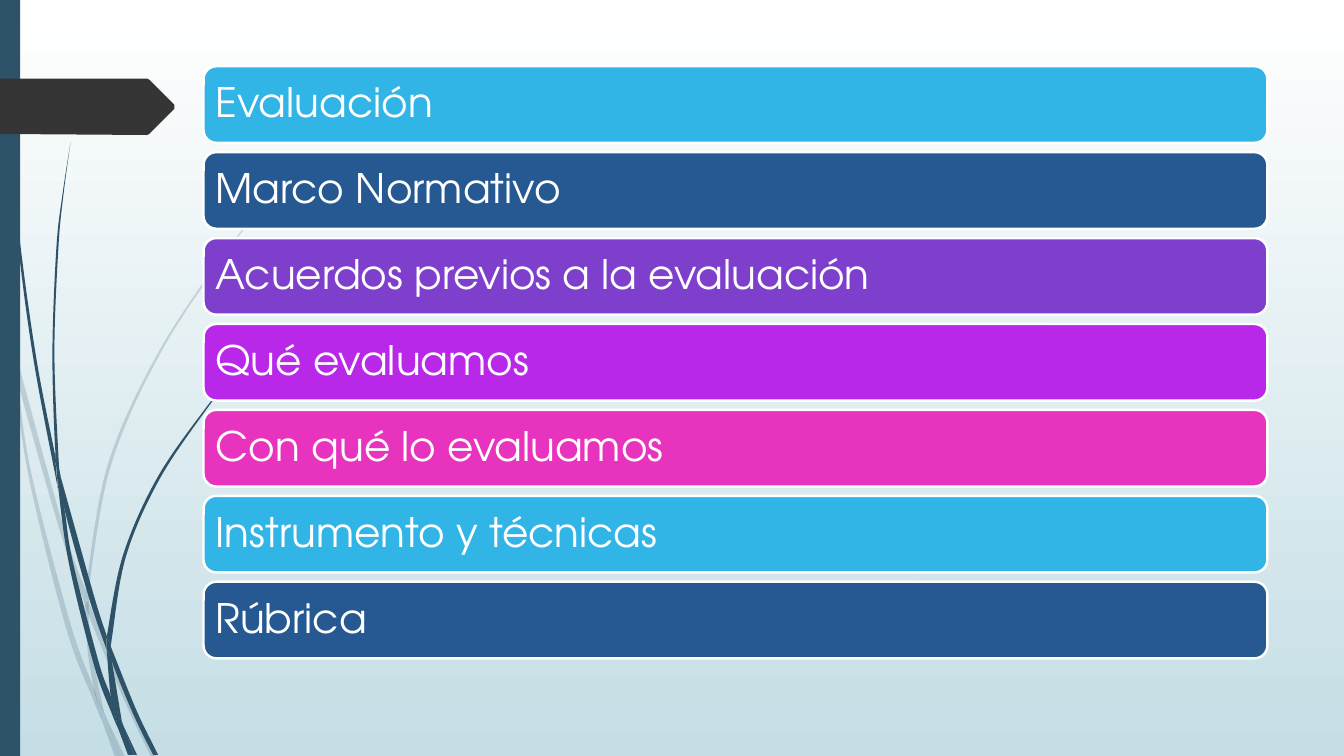
from lxml.etree import SubElement
from pptx import Presentation
from pptx.dml.color import RGBColor
from pptx.enum.shapes import MSO_SHAPE
from pptx.enum.text import MSO_ANCHOR, PP_ALIGN
from pptx.oxml.ns import qn
from pptx.util import Cm, Pt

FONT = "TeX Gyre Adventor"
COLORS = {
    "white": "FFFFFF", "mist": "C5DEE5", "slate": "2E5369", "charcoal": "353535",
    "sky": "31B4E6", "navy": "265991", "violet": "7E40CC", "purple": "B927E9",
    "pink": "E833BF",
}
TOPICS = [
    ("Evaluación", "sky"),
    ("Marco Normativo", "navy"),
    ("Acuerdos previos a la evaluación", "violet"),
    ("Qué evaluamos", "purple"),
    ("Con qué lo evaluamos", "pink"),
    ("Instrumento y técnicas", "sky"),
    ("Rúbrica", "navy"),
]
FIRST_TOP, LAST_TOP = 1.67, 14.66
OUTLINE_UNIT = 0.0254
TAG = [[(0, 78), (146, 78)], [(148, 79), (173, 104)],
       [(173, 108), (148, 133)], [(146, 134), (0, 133)]]
PALE_BLADES = [
    [[(11, 350), (9, 322), (0, 282)], [(0, 299), (10, 344), (11, 350)]],
    [[(14, 345), (17, 376), (58, 522), (84, 599)], [(85, 586), (62, 520), (14, 345)]],
    [[(88, 596), (88, 610), (123, 694), (150, 751)],
     [(155, 751), (127, 692), (92, 607), (88, 596)]],
    [[(119, 751), (124, 751)], [(105, 711), (119, 751)]],
    [[(11, 350), (28, 470), (65, 621), (92, 693), (101, 714)],
     [(99, 707), (93, 683), (70, 619), (31, 469), (17, 376), (11, 350)]],
    [[(84, 599), (87, 646), (93, 683), (96, 692), (105, 711)],
     [(103, 706), (91, 646), (88, 610), (88, 608), (84, 599)]],
    [[(88, 584), (110, 462), (160, 349), (229, 245), (268, 198), (290, 175), (312, 154)],
     [(312, 153), (289, 175), (268, 197), (228, 244), (158, 348), (107, 461), (85, 584)],
     [(85, 586), (88, 596), (88, 584)]],
    [[(101, 714), (114, 751)], [(119, 751), (101, 714)]],
    [[(88, 608), (88, 610), (88, 596)], [(85, 586), (84, 599), (88, 608)]],
    [[(96, 692), (93, 683), (99, 707), (101, 714), (119, 751)],
     [(119, 751), (105, 711), (96, 692)]],
]
DARK_BLADES = [
    [[(4, 0), (3, 0), (4, 48), (7, 110), (17, 233), (33, 355), (56, 477), (57, 481)],
     [(55, 457), (55, 453), (36, 355), (19, 232), (8, 109), (5, 48), (4, 0)]],
    [[(60, 472), (64, 505), (88, 592), (106, 645)],
     [(106, 633), (106, 631), (93, 590), (60, 472)]],
    [[(110, 641), (111, 656), (132, 708), (152, 749)],
     [(157, 749), (136, 706), (113, 649), (110, 641)]],
    [[(57, 477), (68, 557), (93, 659), (111, 708), (117, 722)],
     [(116, 717), (110, 691), (98, 657), (72, 556), (64, 505), (57, 477)]],
    [[(60, 472), (58, 453), (54, 349), (58, 245), (63, 193), (70, 141)],
     [(70, 141), (62, 193), (56, 245), (52, 349), (55, 449), (60, 472)]],
    [[(133, 749), (136, 749)], [(122, 719), (133, 749)]],
    [[(57, 477), (64, 505)], [(60, 472), (55, 449)], [(55, 453), (57, 477)]],
    [[(111, 633), (125, 552), (158, 476), (205, 406), (231, 374), (245, 359), (261, 344)],
     [(260, 344), (245, 358), (231, 373), (204, 405), (156, 474), (122, 551), (106, 631)],
     [(110, 641), (111, 633)]],
    [[(117, 722), (127, 749)], [(131, 749), (117, 722)]],
    [[(106, 645), (110, 691), (116, 706), (122, 719)],
     [(121, 716), (111, 656), (109, 651), (106, 645)]],
    [[(106, 645), (109, 651), (111, 656)], [(110, 641), (106, 631)],
     [(106, 633), (106, 645)]],
    [[(116, 706), (110, 691), (116, 717), (117, 722), (130, 749)],
     [(133, 749), (122, 719), (116, 706)]],
]


def rgb(name):
    """Return the named colour."""
    return RGBColor.from_string(COLORS[name])


def curve_points(edge):
    """Return two control points and an end for each span of a smooth edge."""
    padded = [edge[0], *edge, edge[-1]]
    points = []
    for a, b, c, d in zip(padded, padded[1:], padded[2:], padded[3:]):
        points.append(tuple(q + (s - p) / 6 for p, q, s in zip(a, b, c)))
        points.append(tuple(s - (u - q) / 6 for q, s, u in zip(b, c, d)))
        points.append(c)
    return points


def curve_lines(sp):
    """Turn every three line segments of a freeform into one Bézier curve."""
    lines = list(sp.element.iter(qn("a:lnTo")))
    for first, second, third in zip(lines[::3], lines[1::3], lines[2::3]):
        first.tag = qn("a:cubicBezTo")
        for line in (second, third):
            first.append(line[0])
            line.getparent().remove(line)


def paint(sp, color):
    """Give a shape a plain fill without line or shadow."""
    sp.shadow.inherit = False
    sp.fill.solid()
    sp.fill.fore_color.rgb = rgb(color)
    sp.line.fill.background()


def add_outline(slide, edges, color, opacity=100):
    """Draw a closed outline made of smooth edges."""
    points = [edges[0][0], *curve_points(edges[0])]
    for before, edge in zip(edges, edges[1:]):
        points += curve_points([before[-1], edge[0]]) + curve_points(edge)
    points = [(Cm(x * OUTLINE_UNIT), Cm(y * OUTLINE_UNIT)) for x, y in points]
    builder = slide.shapes.build_freeform(*points[0])
    builder.add_line_segments(points[1:], close=False)
    sp = builder.convert_to_shape()
    curve_lines(sp)
    paint(sp, color)
    if opacity < 100:
        clr = sp.element.spPr.find(qn("a:solidFill"))[0]
        SubElement(clr, qn("a:alpha")).set("val", str(opacity * 1000))


def add_block(slide, kind, left, top, width, height, color):
    """Add a plain preset shape, measured in centimetres."""
    sp = slide.shapes.add_shape(kind, Cm(left), Cm(top), Cm(width), Cm(height))
    paint(sp, color)
    return sp


def add_topic(slide, text, color, top):
    """Add a rounded bar with a topic title."""
    sp = add_block(slide, MSO_SHAPE.ROUNDED_RECTANGLE, 5.13, top, 26.81, 1.93, color)
    sp.line.color.rgb = rgb("white")
    sp.line.width = Pt(1.75)
    tf = sp.text_frame
    tf.word_wrap = True
    tf.vertical_anchor = MSO_ANCHOR.MIDDLE
    tf.margin_left = tf.margin_right = tf.margin_top = tf.margin_bottom = Cm(0.21)
    tf.text = text
    p = tf.paragraphs[0]
    p.alignment = PP_ALIGN.LEFT
    p.line_spacing = 0.9
    r = p.runs[0]
    r.font.name = FONT
    r.font.size = Pt(29)
    r.font.color.rgb = rgb("white")


def set_background(slide):
    """Fill the background with a gradient from top to bottom."""
    fill = slide.background.fill
    fill.gradient()
    fill.gradient_angle = 270
    for stop, color in zip(fill.gradient_stops, ("white", "mist")):
        stop.color.rgb = rgb(color)


def main():
    """Build the slide and save it."""
    prs = Presentation()
    prs.slide_width, prs.slide_height = Cm(33.87), Cm(19.05)
    slide = prs.slides.add_slide(prs.slide_layouts[6])
    set_background(slide)
    for edges in PALE_BLADES:
        add_outline(slide, edges, "slate", opacity=20)
    for edges in DARK_BLADES:
        add_outline(slide, edges, "slate")
    add_block(slide, MSO_SHAPE.RECTANGLE, 0, 0, 0.51, 19.05, "slate")
    add_outline(slide, TAG, "charcoal")
    pitch = (LAST_TOP - FIRST_TOP) / (len(TOPICS) - 1)
    for i, (text, color) in enumerate(TOPICS):
        add_topic(slide, text, color, FIRST_TOP + i * pitch)
    prs.save("out.pptx")


if __name__ == "__main__":
    main()
